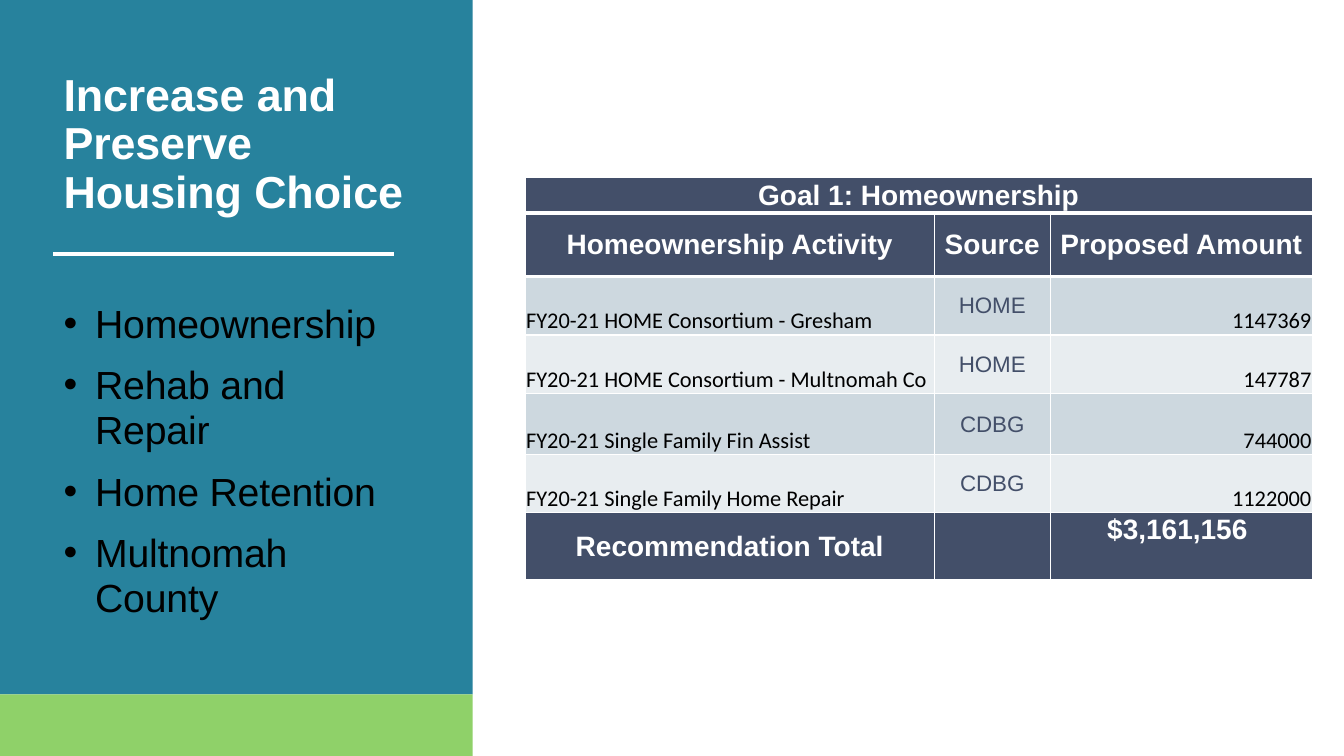
"""Build a housing slide with a goals sidebar and a homeownership funding table."""
from dataclasses import dataclass, field
from typing import Any

from lxml import etree
from pptx import Presentation
from pptx.dml.color import RGBColor
from pptx.enum.shapes import MSO_CONNECTOR, MSO_SHAPE
from pptx.enum.text import MSO_ANCHOR, PP_ALIGN
from pptx.oxml.ns import qn
from pptx.util import Pt

RECTANGLE = MSO_SHAPE.RECTANGLE
STRAIGHT = MSO_CONNECTOR.STRAIGHT
TOP, MIDDLE, BOTTOM = MSO_ANCHOR.TOP, MSO_ANCHOR.MIDDLE, MSO_ANCHOR.BOTTOM
LEFT, CENTER, RIGHT = PP_ALIGN.LEFT, PP_ALIGN.CENTER, PP_ALIGN.RIGHT


@dataclass(frozen=True)
class Theme:
    teal: str = "27829D"
    green: str = "8FD169"
    white: str = "FFFFFF"
    black: str = "000000"
    navy: str = "434F69"
    bands: tuple[str, str] = ("CDD8DF", "E8EDF0")
    heading_font: str = "Arial"
    data_font: str = "Calibri"
    title_size: float = 32
    goal_size: float = 28
    header_size: float = 20
    data_size: float = 16
    thin_rule: float = 1
    thick_rule: float = 3


THEME = Theme()


@dataclass(frozen=True)
class Box:
    left: float
    top: float
    width: float
    height: float

    def lengths(self) -> tuple[int, ...]:
        return tuple(Pt(n) for n in (self.left, self.top, self.width, self.height))


@dataclass(frozen=True)
class Style:
    color: str
    size: float
    font: str = THEME.heading_font
    bold: bool = False
    align: Any = CENTER
    anchor: Any = MIDDLE


@dataclass(frozen=True)
class Panel:
    box: Box
    color: str


@dataclass(frozen=True)
class TextBlock:
    box: Box
    lines: tuple[str, ...]
    style: Style
    top_inset: float
    spacing: dict[str, float] = field(default_factory=dict)
    indent: float = 0


@dataclass(frozen=True)
class TableRow:
    height: float
    texts: tuple[str, ...]
    styles: tuple[Style, ...]
    fill: str
    top_rule: float = THEME.thin_rule
    bottom_rule: float = THEME.thin_rule


PANELS = (
    Panel(Box(0, 0, 337.7, 496), THEME.teal),
    Panel(Box(0, 496, 337.7, 44), THEME.green),
)
TITLE = TextBlock(
    Box(45.4, 46.1, 265.7, 111.6),
    ("Increase and Preserve Housing Choice",),
    Style(THEME.white, THEME.title_size, bold=True, align=LEFT, anchor=TOP),
    5, {"line_spacing": 34.7, "space_before": 5.2},
)
GOALS = TextBlock(
    Box(45.4, 206.6, 265.7, 239),
    ("Homeownership", "Rehab and Repair", "Home Retention", "Multnomah County"),
    Style(THEME.black, THEME.goal_size, align=LEFT, anchor=TOP),
    8.6, {"line_spacing": 32, "space_before": 6, "space_after": 6}, 22.5,
)

HEADER = Style(THEME.white, THEME.header_size, bold=True)
TOTAL_AMOUNT = Style(THEME.white, THEME.header_size, bold=True, anchor=TOP)
ACTIVITY = Style(THEME.black, THEME.data_size, THEME.data_font, align=LEFT, anchor=BOTTOM)
SOURCE = Style(THEME.navy, THEME.data_size)
AMOUNT = Style(THEME.black, THEME.data_size, THEME.data_font, align=RIGHT, anchor=BOTTOM)

COLUMN_WIDTHS = (292.3, 82.8, 187.2)
FUNDING = (
    (41.8, "FY20-21 HOME Consortium - Gresham", "HOME", "1147369"),
    (41.8, "FY20-21 HOME Consortium - Multnomah Co", "HOME", "147787"),
    (43.4, "FY20-21 Single Family Fin Assist", "CDBG", "744000"),
    (41.8, "FY20-21 Single Family Home Repair", "CDBG", "1122000"),
)
ROWS = (
    TableRow(25.2, ("Goal 1: Homeownership", "", ""), (HEADER,) * 3, THEME.navy,
             bottom_rule=THEME.thick_rule),
    TableRow(45.4, ("Homeownership Activity", "Source", "Proposed Amount"), (HEADER,) * 3,
             THEME.navy, THEME.thick_rule, THEME.thick_rule),
    *(TableRow(height, tuple(texts), (ACTIVITY, SOURCE, AMOUNT), THEME.bands[i % 2],
               THEME.thin_rule if i else THEME.thick_rule)
      for i, (height, *texts) in enumerate(FUNDING)),
    TableRow(47.5, ("Recommendation Total", "", "$3,161,156 "),
             (HEADER, HEADER, TOTAL_AMOUNT), THEME.navy),
)
TABLE_BOX = Box(375.1, 126.9, sum(COLUMN_WIDTHS), sum(row.height for row in ROWS))


def write(paragraph: Any, text: str, style: Style) -> Any:
    paragraph.alignment = style.align
    run = paragraph.add_run()
    run.text = text
    formats = {"name": style.font, "size": Pt(style.size), "bold": style.bold}
    for attribute, value in formats.items():
        setattr(run.font, attribute, value)
    run.font.color.rgb = RGBColor.from_string(style.color)
    return run


def draw_panel(shapes: Any, panel: Panel) -> None:
    shape = shapes.add_shape(RECTANGLE, *panel.box.lengths())
    shape.shadow.inherit = False
    shape.fill.solid()
    shape.fill.fore_color.rgb = RGBColor.from_string(panel.color)
    shape.line.fill.background()


def draw_divider(shapes: Any, left: float, right: float, top: float) -> None:
    divider = shapes.add_connector(STRAIGHT, Pt(left), Pt(top), Pt(right), Pt(top))
    divider.line.color.rgb = RGBColor.from_string(THEME.white)
    divider.line.width = Pt(2.58)
    etree.SubElement(divider.element.spPr, qn("a:effectLst"))


def add_bullet(paragraph: Any, indent: float) -> None:
    properties = paragraph._p.get_or_add_pPr()
    for name, length in {"marL": indent, "marR": indent, "indent": -indent}.items():
        properties.set(name, str(int(Pt(length))))
    etree.SubElement(properties, qn("a:buFont"), typeface=THEME.heading_font)
    etree.SubElement(properties, qn("a:buChar"), char="•")


def draw_text(shapes: Any, block: TextBlock) -> None:
    frame = shapes.add_textbox(*block.box.lengths()).text_frame
    formats = {"word_wrap": True, "vertical_anchor": block.style.anchor, "margin_left": 0,
               "margin_top": Pt(block.top_inset), "margin_right": 0, "margin_bottom": 0}
    for attribute, value in formats.items():
        setattr(frame, attribute, value)
    for i, line in enumerate(block.lines):
        paragraph = frame.add_paragraph() if i else frame.paragraphs[0]
        run = write(paragraph, line, block.style)
        run.font._element.set("spc", "-10")
        for attribute, points in block.spacing.items():
            setattr(paragraph, attribute, Pt(points))
        if block.indent:
            add_bullet(paragraph, block.indent)


def draw_cell(cell: Any, text: str, style: Style, row: TableRow) -> None:
    formats = {"vertical_anchor": style.anchor, "margin_left": Pt(0.7), "margin_top": Pt(0.7),
               "margin_right": Pt(0.7), "margin_bottom": 0}
    for attribute, value in formats.items():
        setattr(cell, attribute, value)
    rules = {"a:lnL": THEME.thin_rule, "a:lnR": THEME.thin_rule,
             "a:lnT": row.top_rule, "a:lnB": row.bottom_rule}
    for tag, width in rules.items():
        rule = etree.SubElement(cell._tc.get_or_add_tcPr(), qn(tag), w=str(int(Pt(width))))
        paint = etree.SubElement(rule, qn("a:solidFill"))
        etree.SubElement(paint, qn("a:srgbClr"), val=THEME.white)
    cell.fill.solid()
    cell.fill.fore_color.rgb = RGBColor.from_string(row.fill)
    if text:
        write(cell.text_frame.paragraphs[0], text, style)


def draw_table(shapes: Any) -> None:
    table = shapes.add_table(len(ROWS), len(COLUMN_WIDTHS), *TABLE_BOX.lengths()).table
    table.first_row = table.horz_banding = False
    for column, width in zip(table.columns, COLUMN_WIDTHS):
        column.width = Pt(width)
    table.cell(0, 0).merge(table.cell(0, len(COLUMN_WIDTHS) - 1))
    for table_row, row in zip(table.rows, ROWS):
        table_row.height = Pt(row.height)
        for cell, text, style in zip(table_row.cells, row.texts, row.styles):
            draw_cell(cell, text, style, row)


def main() -> None:
    deck = Presentation()
    deck.slide_width, deck.slide_height = Pt(960), Pt(540)
    shapes = deck.slides.add_slide(deck.slide_layouts[6]).shapes
    for panel in PANELS:
        draw_panel(shapes, panel)
    draw_divider(shapes, 38, 281.4, 181.4)
    for block in (GOALS, TITLE):
        draw_text(shapes, block)
    draw_table(shapes)
    deck.save("out.pptx")


if __name__ == "__main__":
    main()
